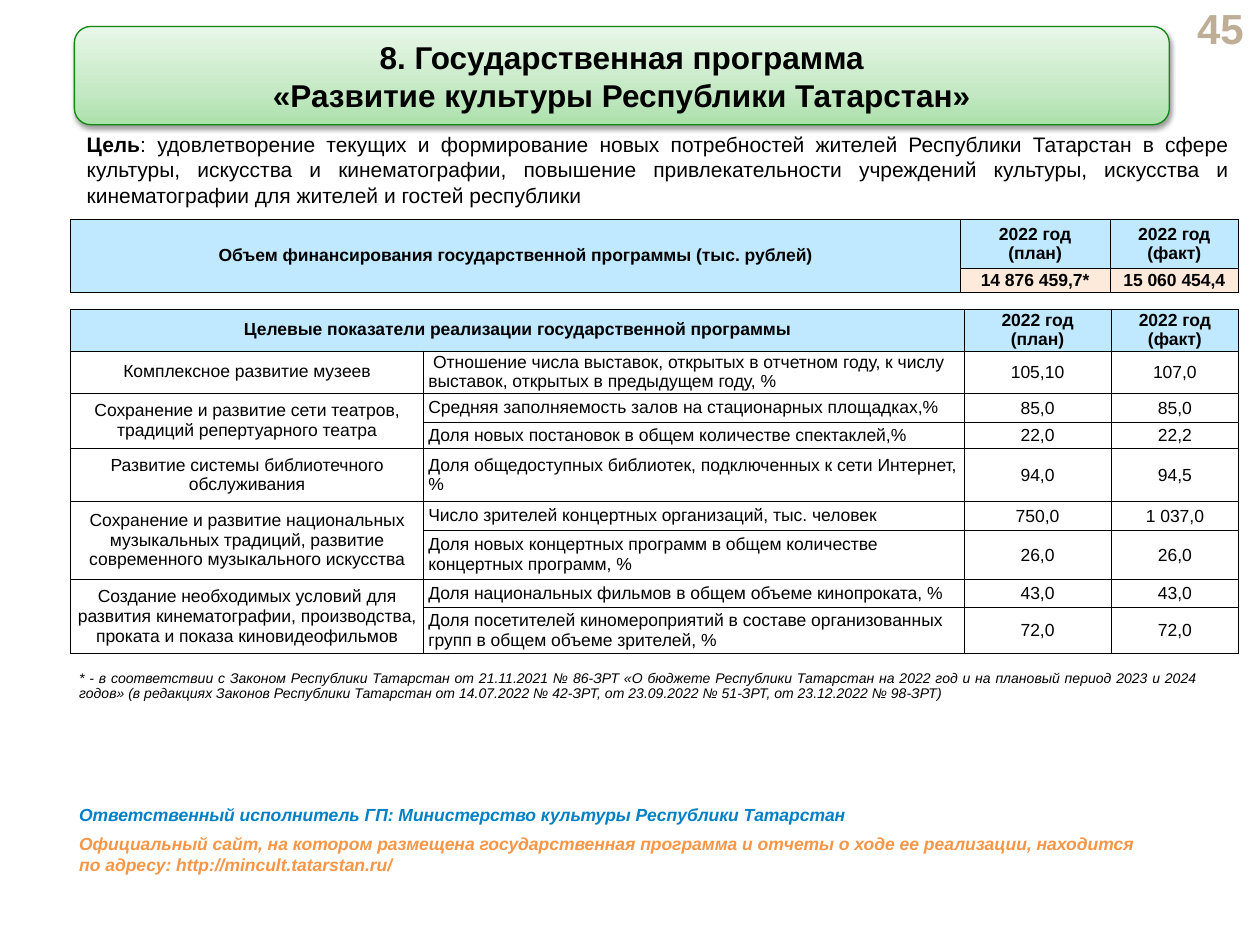
from dataclasses import dataclass
from lxml import etree
from pptx import Presentation
from pptx import util as u
from pptx.dml.color import RGBColor
from pptx.enum import shapes, text
from pptx.oxml.ns import qn

LEFT, MID, RIGHT, JUST = (text.PP_ALIGN.LEFT, text.PP_ALIGN.CENTER,
                          text.PP_ALIGN.RIGHT, text.PP_ALIGN.JUSTIFY)
TOP, CORE = text.MSO_ANCHOR.TOP, text.MSO_ANCHOR.MIDDLE


@dataclass
class Theme:
    font: str = "Arial"
    ink: str = "000000"
    page: str = "BFAE96"
    head: str = "C0E9FF"
    total: str = "FDEADA"
    white: str = "FFFFFF"
    edge: str = "108812"
    owner: str = "0081C5"
    site: str = "F79646"
    fade: tuple = ((0, "ABE1AB"), (35, "C5E9C5"), (100, "E8F7E8"))
    big: int = 24
    title: int = 18
    goal: int = 12
    body: int = 10
    note: int = 8


def node(up, tag, **attrs):
    return etree.SubElement(up, qn(tag), {k: str(v) for k, v in attrs.items()})


class Deck:
    def __init__(self, theme):
        self.theme = theme
        self.prs = Presentation()
        self.prs.slide_width, self.prs.slide_height = u.Inches(10), u.Inches(7.5)
        self.slide = self.prs.slides.add_slide(self.prs.slide_layouts[6])

    def style(self, run, size, color=None, bold=False, ital=False):
        font = run.font
        font.name, font.size = self.theme.font, u.Pt(size)
        font.bold, font.italic = bold, ital
        font.color.rgb = RGBColor.from_string(color or self.theme.ink)

    def words(self, frame, copy, size, align=LEFT, pitch=None, **look):
        frame.word_wrap = True
        frame.text = copy
        for par in frame.paragraphs:
            par.alignment = align
            if pitch:
                par.line_spacing = pitch
            for run in par.runs:
                self.style(run, size, **look)

    def label(self, box, copy, size, anchor=TOP, **look):
        frame = self.slide.shapes.add_textbox(*map(u.Inches, box)).text_frame
        frame.vertical_anchor = anchor
        self.words(frame, copy, size, **look)
        return frame

    def goal(self, box, lead, rest):
        frame = self.label(box, lead, self.theme.goal, CORE, align=JUST, bold=True)
        run = frame.paragraphs[0].add_run()
        run.text = rest
        self.style(run, self.theme.goal)

    def banner(self, box, copy):
        plate = self.slide.shapes.add_shape(
            shapes.MSO_SHAPE.ROUNDED_RECTANGLE, *map(u.Inches, box))
        plate.fill.gradient()
        plate.fill.gradient_angle = 90
        props = plate._element.spPr
        stops = props.find(".//" + qn("a:gsLst"))
        for old in list(stops):
            stops.remove(old)
        for pos, color in self.theme.fade:
            node(node(stops, "a:gs", pos=pos * 1000), "a:srgbClr", val=color)
        plate.line.color.rgb = RGBColor.from_string(self.theme.edge)
        plate.line.width = u.Pt(0.75)
        plate.shadow.inherit = False
        shade = node(props.find(qn("a:effectLst")), "a:outerShdw",
                     blurRad=u.Pt(3.1), dist=u.Pt(1.6), dir=5400000, rotWithShape=0)
        node(node(shade, "a:srgbClr", val=self.theme.ink), "a:alpha", val=38000)
        plate.text_frame.vertical_anchor = CORE
        self.words(plate.text_frame, copy, self.theme.title, align=MID, bold=True)

    def grid(self, spot, cols, rows):
        frame = self.slide.shapes.add_table(
            len(rows), len(cols), *map(u.Inches, (*spot, sum(cols), sum(rows))))
        table = frame.table
        table.first_row = table.horz_banding = False
        for col, wide in zip(table.columns, cols):
            col.width = u.Inches(wide)
        for row, high in zip(table.rows, rows):
            row.height = u.Inches(high)
        for cell in table.iter_cells():
            cell.margin_top = cell.margin_bottom = 0
            props = cell._tc.get_or_add_tcPr()
            for side in ("a:lnL", "a:lnR", "a:lnT", "a:lnB"):
                line = node(props, side, w=u.Pt(0.25))
                node(node(line, "a:solidFill"), "a:srgbClr", val=self.theme.ink)
            cell.fill.background()
        return table

    def cell(self, cell, copy, fill=None, pad=0.04, align=MID, **look):
        if fill:
            cell.fill.solid()
            cell.fill.fore_color.rgb = RGBColor.from_string(fill)
        cell.vertical_anchor = CORE
        cell.margin_left = cell.margin_right = u.Inches(pad)
        self.words(cell.text_frame, copy, self.theme.body, align=align, **look)


YEARS = ("2022 год\n(план)", "2022 год\n(факт)")
TOTALS = ("14 876 459,7*", "15 060 454,4")
GOALS = [
    ("Комплексное развитие музеев", [
        (" Отношение числа выставок, открытых в отчетном году, к числу выставок, "
         "открытых в предыдущем году, %", "105,10", "107,0")]),
    ("Сохранение и развитие сети театров, традиций репертуарного театра", [
        ("Средняя заполняемость залов на стационарных площадках,%", "85,0", "85,0"),
        ("Доля новых постановок в общем количестве спектаклей,%", "22,0", "22,2")]),
    ("Развитие системы библиотечного обслуживания", [
        ("Доля общедоступных библиотек, подключенных к сети Интернет,%",
         "94,0", "94,5")]),
    ("Сохранение и развитие национальных музыкальных традиций, развитие "
     "современного музыкального искусства", [
        ("Число зрителей концертных организаций, тыс. человек", "750,0", "1 037,0"),
        ("Доля новых концертных программ в общем количестве концертных программ, %",
         "26,0", "26,0")]),
    ("Создание необходимых условий для развития кинематографии, производства, "
     "проката и показа киновидеофильмов", [
        ("Доля национальных фильмов в общем объеме кинопроката, %", "43,0", "43,0"),
        ("Доля посетителей киномероприятий в составе организованных групп в общем "
         "объеме зрителей, %", "72,0", "72,0")]),
]


def main():
    theme = Theme()
    deck = Deck(theme)
    deck.label((9.33, 0.05, 0.64, 0.34), "45", theme.big, CORE,
               color=theme.page, align=RIGHT, bold=True)

    funds = deck.grid((0.56, 1.74), (7.06, 1.19, 1.02), (0.39, 0.19))
    funds.cell(0, 0).merge(funds.cell(1, 0))
    deck.cell(funds.cell(0, 0),
              "Объем финансирования государственной программы (тыс. рублей)",
              theme.head, 0.06, bold=True)
    for col, (year, total) in enumerate(zip(YEARS, TOTALS), 1):
        deck.cell(funds.cell(0, col), year, theme.head, 0.06, bold=True)
        deck.cell(funds.cell(1, col), total, theme.total, 0.01, bold=True)

    deck.goal((0.59, 0.99, 9.27, 0.71), "Цель",
              ": удовлетворение текущих и формирование новых потребностей жителей "
              "Республики Татарстан в сфере культуры, искусства и кинематографии, "
              "повышение привлекательности учреждений культуры, искусства и "
              "кинематографии для жителей и гостей республики")
    deck.banner((0.59, 0.21, 8.69, 0.78),
                "8. Государственная программа\n«Развитие культуры Республики Татарстан»")

    aims = deck.grid((0.56, 2.45), (2.8, 4.29, 1.17, 1.01),
                     (0.33, 0.33, 0.23, 0.21, 0.42, 0.23, 0.39, 0.22, 0.37))
    aims.cell(0, 0).merge(aims.cell(0, 1))
    deck.cell(aims.cell(0, 0), "Целевые показатели реализации государственной программы",
              theme.head, bold=True)
    for col, year in enumerate(YEARS, 2):
        deck.cell(aims.cell(0, col), year, theme.head, bold=True)
    row = 1
    for name, marks in GOALS:
        if len(marks) > 1:
            aims.cell(row, 0).merge(aims.cell(row + len(marks) - 1, 0))
        deck.cell(aims.cell(row, 0), name)
        for mark, *sums in marks:
            deck.cell(aims.cell(row, 1), mark, align=LEFT)
            for col, num in enumerate(sums, 2):
                deck.cell(aims.cell(row, col), num, theme.white, 0.01, pitch=1.07)
            row += 1

    deck.label((0.53, 6.33, 9.33, 0.27),
               "Ответственный исполнитель ГП: Министерство культуры Республики Татарстан",
               theme.body, color=theme.owner, bold=True, ital=True)
    deck.label((0.53, 6.56, 8.75, 0.44),
               "Официальный сайт, на котором размещена государственная программа и отчеты "
               "о ходе ее реализации, находится по адресу: http://mincult.tatarstan.ru/",
               theme.body, color=theme.site, bold=True, ital=True)
    deck.label((0.53, 5.28, 9.08, 0.62),
               "* - в соответствии с Законом Республики Татарстан от 21.11.2021 № 86-ЗРТ "
               "«О бюджете Республики Татарстан на 2022 год и на плановый период 2023 и "
               "2024 годов» (в редакциях Законов Республики Татарстан от 14.07.2022 "
               "№ 42-ЗРТ, от 23.09.2022 № 51-ЗРТ, от 23.12.2022 № 98-ЗРТ)",
               theme.note, align=JUST, ital=True, pitch=0.9)
    deck.prs.save("out.pptx")


if __name__ == "__main__":
    main()
